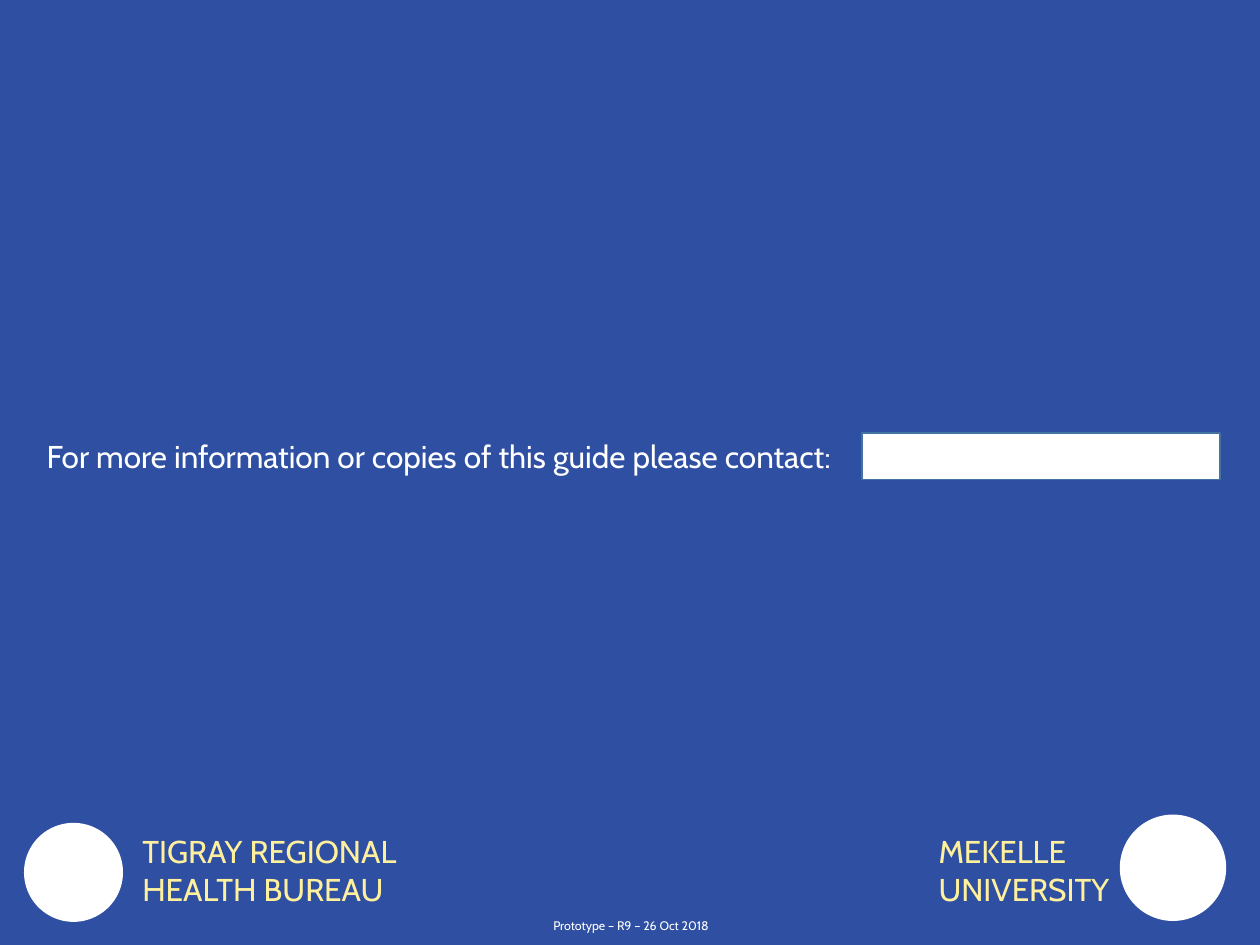
import pptx
import pptx.util
import pptx.dml.color
import pptx.enum.shapes
import pptx.enum.text

Pt = pptx.util.Pt
Shape = pptx.enum.shapes.MSO_SHAPE
Align = pptx.enum.text.PP_ALIGN
Anchor = pptx.enum.text.MSO_ANCHOR

BLUE, WHITE, CREAM, STEEL = "2F4FA2", "FFFFFF", "FEF09C", "43739E"


def color(code):
    return pptx.dml.color.RGBColor.from_string(code)


class Page:
    font = "Cabin"

    def __init__(self, slide):
        self.slide = slide

    def shape(self, kind, box, fill, line):
        item = self.slide.shapes.add_shape(kind, *map(Pt, box))
        item.shadow.inherit = False
        item.fill.solid()
        item.fill.fore_color.rgb = color(fill)
        item.line.color.rgb = color(line)
        item.line.width = Pt(1)

    def text(self, words, box, ink, size=18, align=Align.LEFT, anchor=Anchor.TOP):
        frame = self.slide.shapes.add_textbox(*map(Pt, box)).text_frame
        frame.word_wrap = True
        frame.auto_size = pptx.enum.text.MSO_AUTO_SIZE.SHAPE_TO_FIT_TEXT
        frame.vertical_anchor = anchor
        frame.text = words
        for para in frame.paragraphs:
            para.alignment = align
            for run in para.runs:
                run.font.name = self.font
                run.font.size = Pt(size)
                run.font.color.rgb = color(ink)

    def partner(self, name, left, disc, top, size):
        """Draw a partner's round emblem space and its name."""
        self.shape(Shape.OVAL, (disc, top, size, size), WHITE, WHITE)
        self.text(name, (left, 471.6, 193, 51), CREAM, anchor=Anchor.MIDDLE)


def main():
    deck = pptx.Presentation()
    deck.slide_width, deck.slide_height = Pt(720), Pt(540)
    page = Page(deck.slides.add_slide(deck.slide_layouts[6]))

    page.shape(Shape.RECTANGLE, (0, 0, 720, 540), BLUE, BLUE)
    page.text("Prototype – R9 – 26 Oct 2018", (1.4, 521.3, 718.6, 15.8),
              WHITE, 7.1, Align.CENTER)
    page.partner("TIGRAY REGIONAL HEALTH BUREAU", 74.2, 14.2, 470.7, 55.6)
    page.partner("MEKELLE\nUNIVERSITY", 529.2, 640.4, 466, 59.8)
    page.text("For more information or copies of this guide please contact:",
              (19.6, 246.2, 592.6, 29), WHITE)
    page.shape(Shape.RECTANGLE, (492.8, 247.5, 204.2, 26.5), WHITE, STEEL)

    deck.save("out.pptx")


if __name__ == "__main__":
    main()
